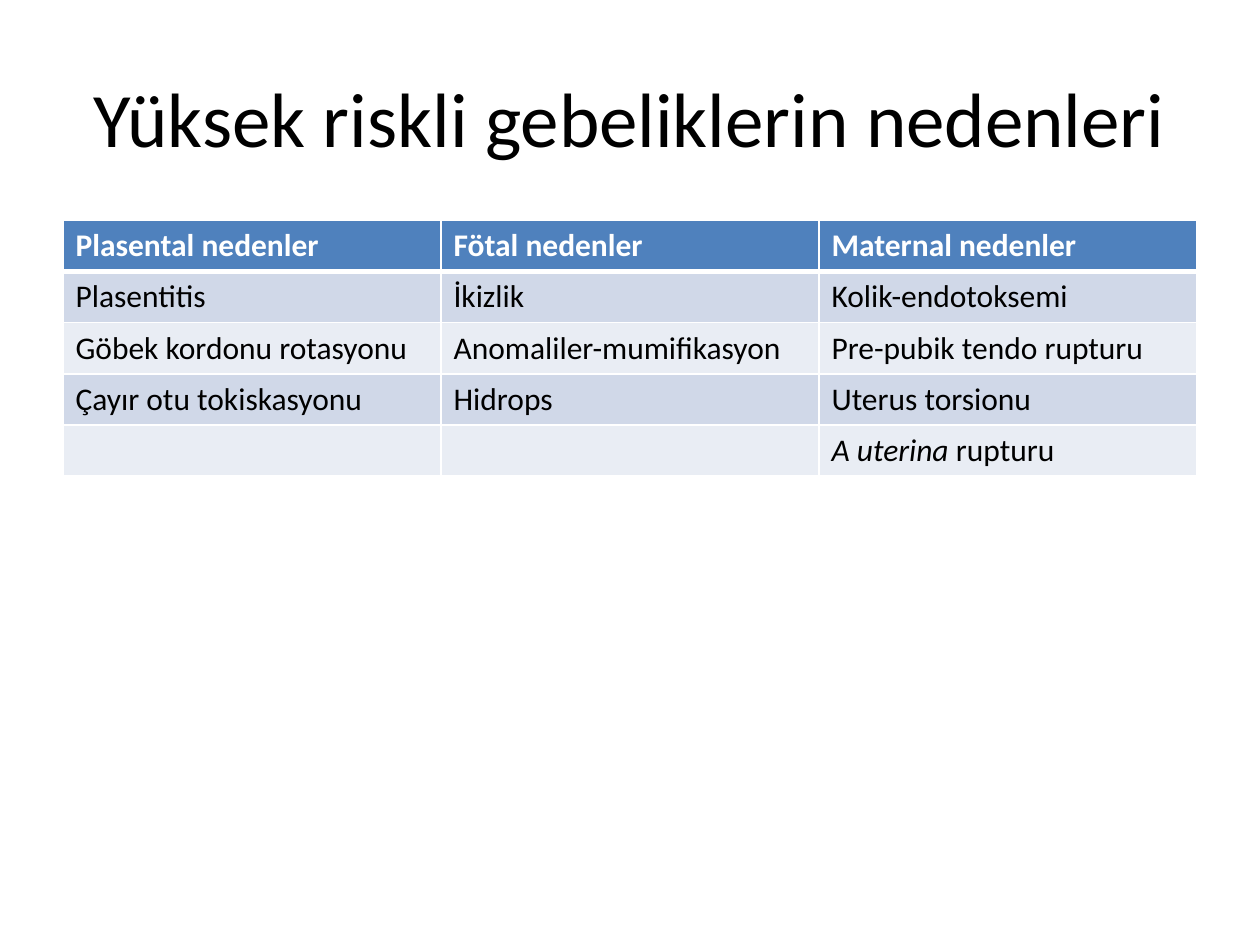
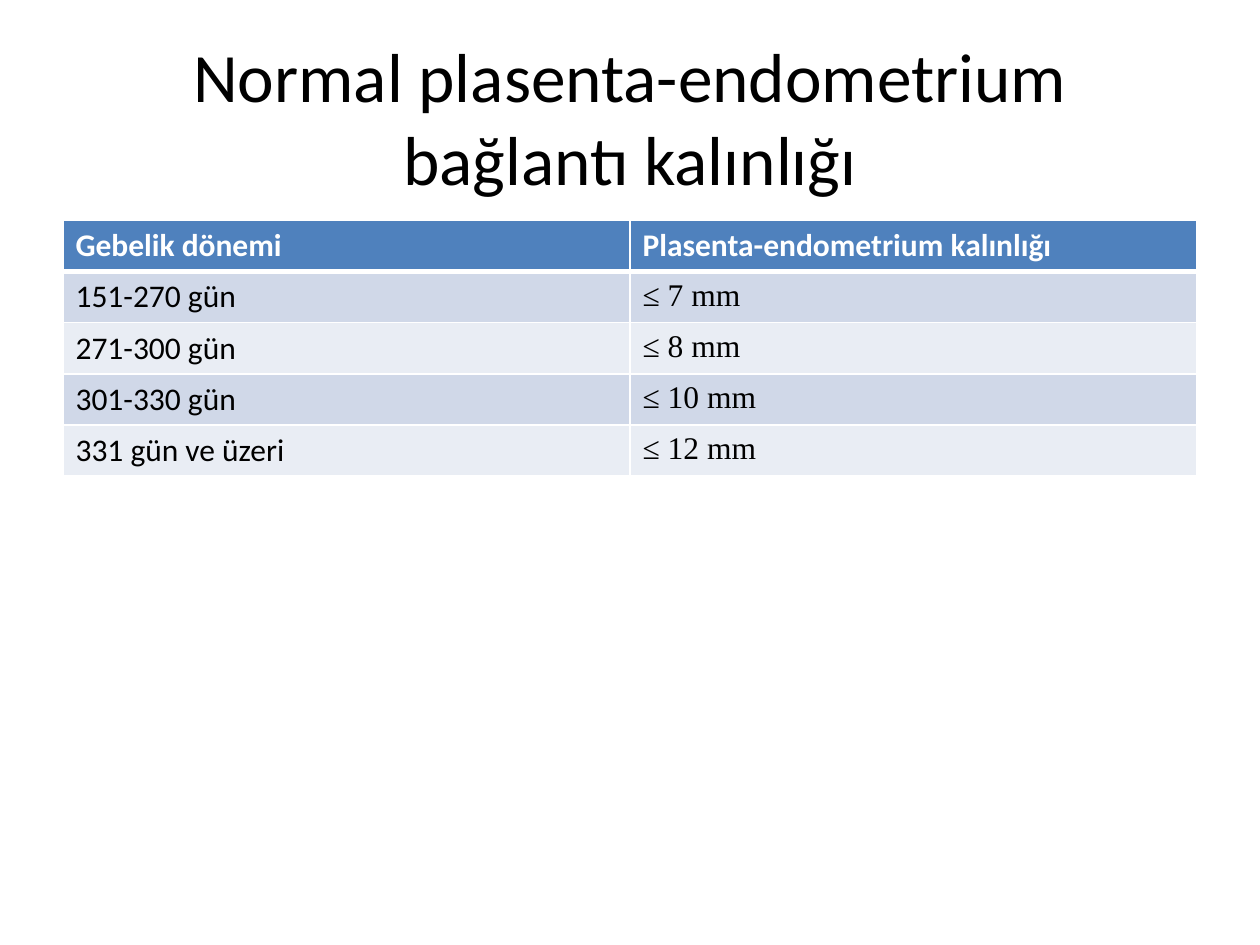
from lxml.etree import SubElement as Sub
from pptx import Presentation
from pptx.dml.color import RGBColor as RGB
from pptx.enum.text import MSO_ANCHOR as Anchor, MSO_AUTO_SIZE as Fit, PP_ALIGN as Align
from pptx.oxml.ns import qn
from pptx.util import Inches, Pt

WHITE, BLACK, BLUE = "FFFFFF", "000000", "4F81BD"
BANDS = "D0D8E8", "E9EDF4"
SANS, SERIF = "Calibri", "Times New Roman"
CAUSES = [
    ["Plasental nedenler", "Fötal nedenler", "Maternal nedenler"],
    ["Plasentitis", "İkizlik", "Kolik-endotoksemi"],
    ["Göbek kordonu rotasyonu", "Anomaliler-mumifikasyon", "Pre-pubik tendo rupturu"],
    ["Çayır otu tokiskasyonu", "Hidrops", "Uterus torsionu"],
    ["", "", [("A uterina ", {"slant": True}), ("rupturu", {})]],
]
LIMITS = [
    ("151-270 gün", "≤ 7 mm"),
    ("271-300 gün", "≤ 8 mm"),
    ("301-330 gün", "≤ 10 mm"),
    ("331 gün ve üzeri", "≤ 12 mm"),
]


def color(code):
    return RGB.from_string(code)


class Deck:
    """Holds the shared style and the current slide."""

    def __init__(self, wide=10, high=7.5):
        self.prs = Presentation()
        self.prs.slide_width, self.prs.slide_height = Inches(wide), Inches(high)

    def box(self, left, top, wide, high):
        w, h = self.prs.slide_width, self.prs.slide_height
        return int(left * w), int(top * h), int(wide * w), int(high * h)

    def run(self, para, text, size=18, face=SANS, ink=BLACK, bold=False, slant=False):
        run = para.add_run()
        run.text = text
        font = run.font
        font.size, font.name, font.bold, font.italic = Pt(size), face, bold, slant
        font.color.rgb = color(ink)

    def slide(self, title, size=44):
        self.page = self.prs.slides.add_slide(self.prs.slide_layouts[5])
        self.page.background.fill.solid()
        self.page.background.fill.fore_color.rgb = color(WHITE)
        head = self.page.shapes.title
        head.left, head.top, head.width, head.height = self.box(0.05, 0.04, 0.9, 1 / 6)
        frame = head.text_frame
        frame.word_wrap, frame.auto_size = True, Fit.NONE
        frame.vertical_anchor = Anchor.MIDDLE
        para = frame.paragraphs[0]
        para.alignment = Align.CENTER
        self.run(para, title, size)

    def edges(self, cell, row):
        props = cell._tc.get_or_add_tcPr()
        thick = {0: "lnB", 1: "lnT"}.get(row)
        for side in ("lnL", "lnR", "lnT", "lnB"):
            width = Pt(3 if side == thick else 1)
            line = Sub(props, qn(f"a:{side}"), w=str(width))
            Sub(Sub(line, qn("a:solidFill")), qn("a:srgbClr"), val=WHITE)

    def cell(self, cell, row, value):
        self.edges(cell, row)
        cell.fill.solid()
        cell.fill.fore_color.rgb = color(BANDS[(row - 1) % 2] if row else BLUE)
        look = {} if row else {"ink": WHITE, "bold": True}
        runs = [(value, {})] if isinstance(value, str) else value
        for text, extra in runs:
            if text:
                self.run(cell.text_frame.paragraphs[0], text, **look, **extra)

    def table(self, rows):
        spot = self.box(0.05, 0.7 / 3, 0.9, 0.27)
        grid = self.page.shapes.add_table(len(rows), len(rows[0]), *spot).table
        for r, row in enumerate(rows):
            for c, value in enumerate(row):
                self.cell(grid.cell(r, c), r, value)


def main():
    deck = Deck()
    deck.slide("Yüksek riskli gebeliklerin nedenleri")
    deck.table(CAUSES)
    deck.slide("Normal plasenta-endometrium bağlantı kalınlığı", 39.6)
    heads = ["Gebelik dönemi", "Plasenta-endometrium kalınlığı"]
    deck.table([heads] + [[term, [(size, {"face": SERIF})]] for term, size in LIMITS])
    deck.prs.save("out.pptx")


if __name__ == "__main__":
    main()
